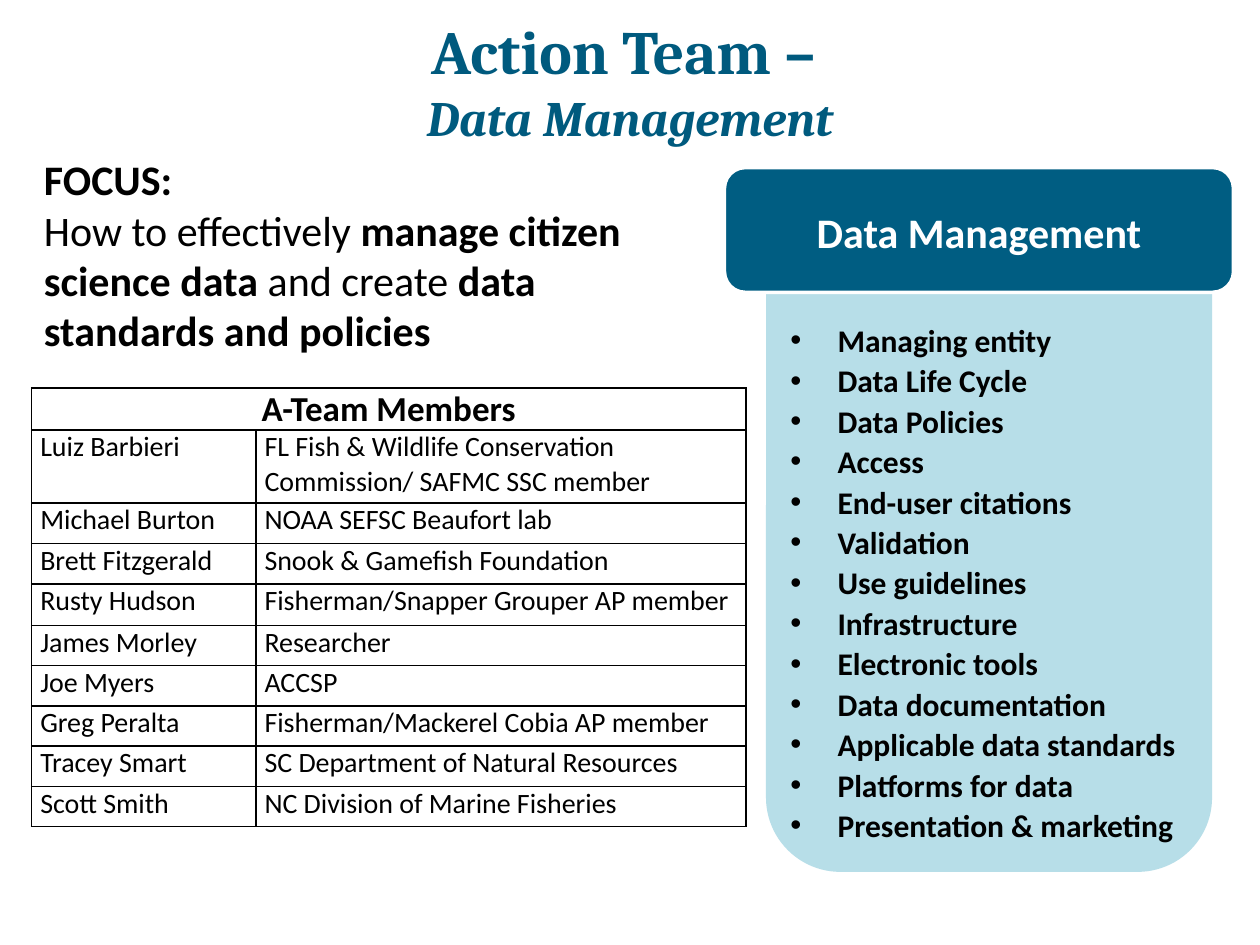
import pptx
import pptx.dml.color
import pptx.enum.shapes
import pptx.enum.text
import pptx.oxml
import pptx.oxml.ns
import pptx.util
from pptx.util import Inches

COLORS = {
    "title": "005A7E",
    "header": "005D82",
    "panel": "B7DEE8",
    "text": "000000",
    "white": "FFFFFF",
}
ANCHOR = pptx.enum.text.MSO_ANCHOR
CENTER = pptx.enum.text.PP_ALIGN.CENTER
ROUNDED = pptx.enum.shapes.MSO_SHAPE.ROUNDED_RECTANGLE


def color(name):
    return pptx.dml.color.RGBColor.from_string(COLORS[name])


def write(paragraph, text, size=16, font="Calibri", fill="text", bold=False, italic=False):
    """Add one formatted run to a paragraph."""
    run = paragraph.add_run()
    run.text = text
    run.font.name = font
    run.font.size = pptx.util.Pt(size)
    run.font.bold = bold
    run.font.italic = italic
    run.font.color.rgb = color(fill)


presentation = pptx.Presentation()
presentation.slide_width = Inches(10)
presentation.slide_height = Inches(7.5)
slide = presentation.slides.add_slide(presentation.slide_layouts[1])

# Title
title = slide.shapes.title
title.left, title.top = Inches(0), Inches(-0.17)
title.width, title.height = Inches(10), Inches(1.61)
frame = title.text_frame
frame.auto_size = pptx.enum.text.MSO_AUTO_SIZE.NONE
frame.vertical_anchor = ANCHOR.MIDDLE
title_style = {"font": "Cambria", "fill": "title", "bold": True}
write(frame.paragraphs[0], "Action Team – ", size=35.1, **title_style)
write(frame.add_paragraph(), "Data Management", size=28.3, italic=True, **title_style)
for paragraph in frame.paragraphs:
    paragraph.alignment = CENTER

# Topic list: the body placeholder takes the shape of a rounded panel
topics = [
    "Managing entity", "Data Life Cycle", "Data Policies", "Access",
    "End-user citations", "Validation", "Use guidelines", "Infrastructure",
    "Electronic tools", "Data documentation", "Applicable data standards",
    "Platforms for data", "Presentation & marketing",
]
panel = slide.placeholders[1]
panel.left, panel.top = Inches(6.08), Inches(1.75)
panel.width, panel.height = Inches(3.54), Inches(5.17)
panel.element.spPr.append(pptx.oxml.parse_xml(
    f'<a:prstGeom {pptx.oxml.ns.nsdecls("a")} prst="roundRect"><a:avLst/></a:prstGeom>'))
panel.fill.solid()
panel.fill.fore_color.rgb = color("panel")
frame = panel.text_frame
frame.auto_size = pptx.enum.text.MSO_AUTO_SIZE.NONE
frame.vertical_anchor = ANCHOR.BOTTOM
frame.margin_left = frame.margin_right = Inches(0.02)
for index, topic in enumerate(topics):
    paragraph = frame.add_paragraph() if index else frame.paragraphs[0]
    paragraph.space_before = pptx.util.Pt(0)
    paragraph.line_spacing = 1.07
    write(paragraph, topic, size=18, bold=True)

# Panel header
header = slide.shapes.add_shape(ROUNDED, Inches(5.75), Inches(1.33), Inches(4.04), Inches(0.99))
header.shadow.inherit = False
header.fill.solid()
header.fill.fore_color.rgb = color("header")
header.line.color.rgb = color("white")
header.line.width = pptx.util.Pt(2)
header.text_frame.word_wrap = True
header.text_frame.vertical_anchor = ANCHOR.MIDDLE
paragraph = header.text_frame.paragraphs[0]
paragraph.alignment = CENTER
paragraph.line_spacing = 1.07
paragraph.space_after = pptx.util.Pt(8)
write(paragraph, "Data Management", size=24, fill="white", bold=True)

# Focus statement
focus = slide.shapes.add_textbox(Inches(0.25), Inches(1.17), Inches(5.42), Inches(1.92))
frame = focus.text_frame
frame.word_wrap = True
write(frame.paragraphs[0], "FOCUS:", size=24, bold=True)
paragraph = frame.add_paragraph()
paragraph.space_after = pptx.util.Pt(24)
for text, bold in [
    ("How to effectively ", False),
    ("manage citizen science data", True),
    (" and create ", False),
    ("data standards and policies", True),
]:
    write(paragraph, text, size=24, bold=bold)

# Members table
members = [
    ("Luiz Barbieri", "FL Fish & Wildlife Conservation Commission/ SAFMC SSC member"),
    ("Michael Burton", "NOAA SEFSC Beaufort lab"),
    ("Brett Fitzgerald", "Snook & Gamefish Foundation"),
    ("Rusty Hudson", "Fisherman/Snapper Grouper AP member"),
    ("James Morley", "Researcher"),
    ("Joe Myers", "ACCSP"),
    ("Greg Peralta", "Fisherman/Mackerel Cobia AP member"),
    ("Tracey Smart", "SC Department of Natural Resources"),
    ("Scott Smith", "NC Division of Marine Fisheries"),
]
row_heights = [0.29, 0.58, 0.32, 0.32, 0.33] + [0.32] * 5
table = slide.shapes.add_table(
    len(row_heights), 2, Inches(0.25), Inches(3.08), Inches(5.67), Inches(3.46)).table
table.first_row = table.horz_banding = False
for column, width in zip(table.columns, (1.78, 3.89)):
    column.width = Inches(width)
for row, height in zip(table.rows, row_heights):
    row.height = Inches(height)

for cell in table.iter_cells():
    cell.margin_left = cell.margin_right = Inches(0.07)
    cell.margin_top = cell.margin_bottom = Inches(0)
    properties = cell._tc.get_or_add_tcPr()
    for side in ("lnL", "lnR", "lnT", "lnB"):
        properties.append(pptx.oxml.parse_xml(
            f'<a:{side} {pptx.oxml.ns.nsdecls("a")} w="12700"><a:solidFill>'
            f'<a:srgbClr val="{COLORS["text"]}"/></a:solidFill></a:{side}>'))
    cell.fill.background()

heading = table.cell(0, 0)
heading.merge(table.cell(0, 1))
heading.vertical_anchor = ANCHOR.MIDDLE
heading.text_frame.paragraphs[0].alignment = CENTER
write(heading.text_frame.paragraphs[0], "A-Team Members", size=20, bold=True)
for row_index, member in enumerate(members, start=1):
    for column_index, text in enumerate(member):
        write(table.cell(row_index, column_index).text_frame.paragraphs[0], text)

presentation.save("out.pptx")
